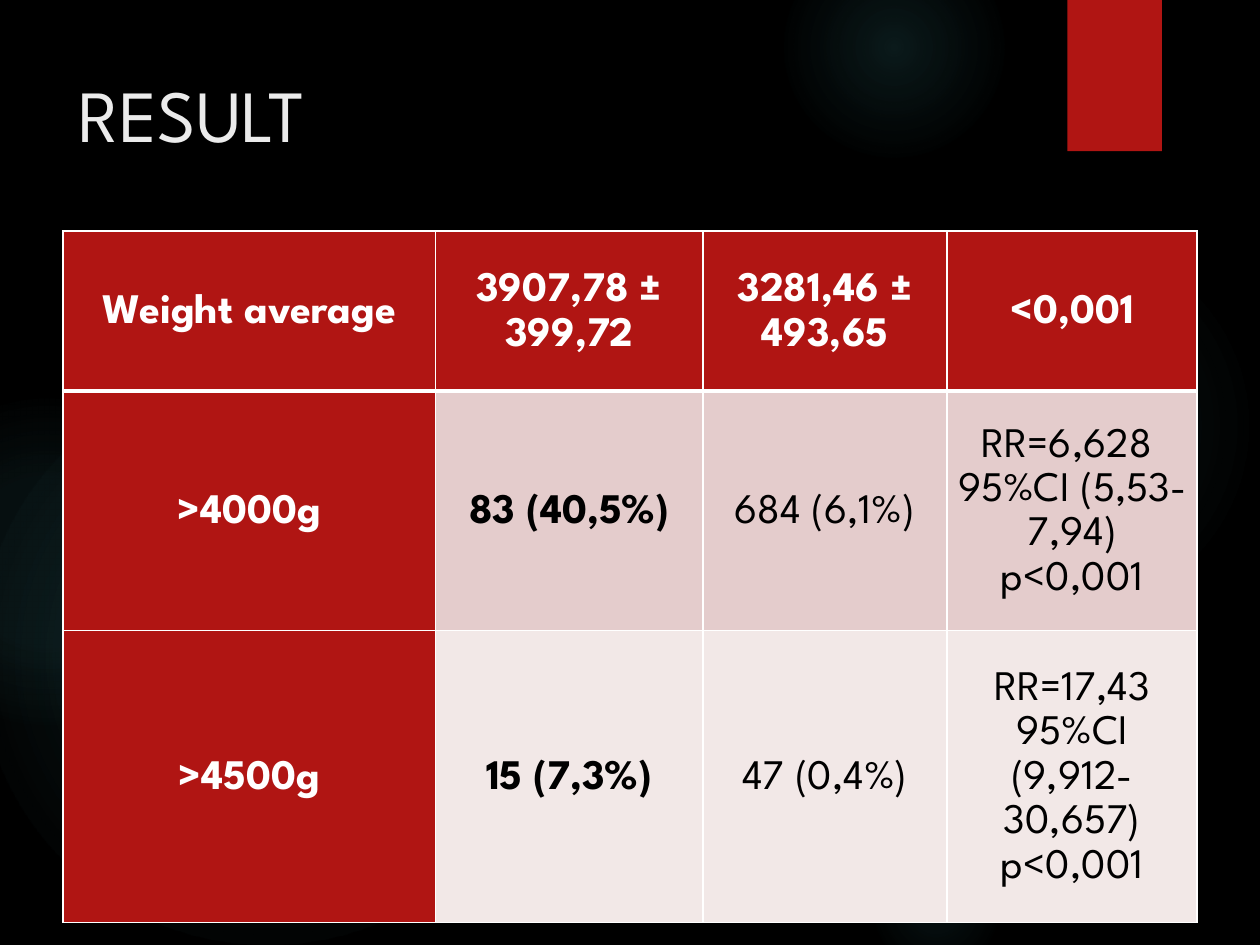
from dataclasses import dataclass

import pptx
import pptx.dml.color
import pptx.enum.shapes
import pptx.enum.text
import pptx.oxml
import pptx.oxml.ns
import pptx.util

Pt = pptx.util.Pt
Color = pptx.dml.color.RGBColor.from_string
ShapeKind = pptx.enum.shapes.MSO_SHAPE
Anchor = pptx.enum.text.MSO_ANCHOR
Align = pptx.enum.text.PP_ALIGN
NAMESPACE = pptx.oxml.ns.nsdecls("a")


@dataclass(frozen=True)
class Theme:
    font: str = "League Spartan"
    title_size: float = 42
    table_size: float = 24
    background: str = "000000"
    title: str = "EBEBEB"
    accent: str = "B01513"
    light: str = "FFFFFF"
    dark: str = "000000"
    bands: tuple[str, ...] = ("E4CCCC", "F2E8E7")
    glow: str = "50B9C1"


@dataclass(frozen=True)
class Glow:
    """A round light; stops are (position, opacity) in percent."""
    left: float
    top: float
    size: float
    stops: tuple[tuple[int, int], ...]


THEME = Theme()
GLOWS = (
    Glow(496, 132, 222, ((0, 7), (36, 6), (69, 0))),
    Glow(448, -36, 126, ((0, 14), (36, 7), (73, 0))),
    Glow(496, 480, 78, ((0, 9), (36, 5), (66, 0))),
    Glow(-12, 210, 330, ((0, 11), (36, 10), (75, 0))),
    Glow(-66, 228, 186, ((0, 8), (36, 8), (72, 0))),
)
COLUMN_WIDTHS = (213, 152.6, 139.7, 142.7)
ROW_HEIGHTS = (91.4, 136.8, 136.8)
ROWS = (
    ("Weight average", "3907,78 ± 399,72", "3281,46 ± 493,65", "<0,001"),
    (">4000g", "83 (40,5%)", "684 (6,1%)",
     "RR=6,628 \n95%CI (5,53-7,94) p<0,001"),
    (">4500g", "15 (7,3%)", "47 (0,4%)",
     "RR=17,43\n95%CI (9,912-30,657) p<0,001"),
)


def add_plain_shape(page, kind, left: float, top: float, width: float, height: float):
    shape = page.shapes.add_shape(kind, Pt(left), Pt(top), Pt(width), Pt(height))
    shape.shadow.inherit = False
    shape.line.fill.background()
    return shape


def add_glow(page, glow: Glow) -> None:
    shape = add_plain_shape(page, ShapeKind.OVAL, glow.left, glow.top, glow.size, glow.size)
    shape.fill.background()
    stops = "".join(
        f'<a:gs pos="{position * 1000}"><a:srgbClr val="{THEME.glow}">'
        f'<a:alpha val="{opacity * 1000}"/></a:srgbClr></a:gs>'
        for position, opacity in glow.stops
    )
    gradient = pptx.oxml.parse_xml(
        f'<a:gradFill {NAMESPACE} rotWithShape="1"><a:gsLst>{stops}</a:gsLst>'
        '<a:path path="circle"><a:fillToRect l="50000" t="50000" r="50000" b="50000"/>'
        "</a:path></a:gradFill>"
    )
    properties = shape._element.spPr
    properties.replace(properties.find(pptx.oxml.ns.qn("a:noFill")), gradient)


def add_ribbon(page) -> None:
    ribbon = add_plain_shape(page, ShapeKind.RECTANGLE, 610, 0, 54, 86.4)
    ribbon.fill.solid()
    ribbon.fill.fore_color.rgb = Color(THEME.accent)


def style_font(font, size: float, color: str, bold: bool = False) -> None:
    font.name = THEME.font
    font.size = Pt(size)
    font.bold = bold
    font.color.rgb = Color(color)


def add_title(page, text: str) -> None:
    box = page.shapes.add_textbox(Pt(38), Pt(36), Pt(556), Pt(110))
    box.text_frame.word_wrap = True
    para = box.text_frame.paragraphs[0]
    para.text = text
    style_font(para.font, THEME.title_size, THEME.title)


def set_borders(cell, bottom: float = 1, top: float = 1) -> None:
    """Draw the four cell edges; call before the cell is filled."""
    properties = cell._tc.get_or_add_tcPr()
    for side, width in (("L", 1), ("R", 1), ("T", top), ("B", bottom)):
        properties.append(pptx.oxml.parse_xml(
            f'<a:ln{side} {NAMESPACE} w="{Pt(width)}"><a:solidFill>'
            f'<a:srgbClr val="{THEME.light}"/></a:solidFill></a:ln{side}>'
        ))


def fill_cell(cell, text: str, row: int, column: int) -> None:
    heading = row == 0 or column == 0
    set_borders(cell, bottom=3 if row == 0 else 1, top=3 if row == 1 else 1)
    cell.fill.solid()
    cell.fill.fore_color.rgb = Color(THEME.accent if heading else THEME.bands[row - 1])
    cell.vertical_anchor = Anchor.MIDDLE
    cell.margin_left = cell.margin_right = Pt(5)
    cell.margin_top = cell.margin_bottom = Pt(0.7)
    cell.text = text
    for para in cell.text_frame.paragraphs:
        para.alignment = Align.CENTER
        para.line_spacing = 1.15
        style_font(para.font, THEME.table_size,
                   THEME.light if heading else THEME.dark, heading or column == 1)


def add_result_table(page) -> None:
    table = page.shapes.add_table(
        len(ROWS), len(COLUMN_WIDTHS), Pt(36), Pt(132),
        Pt(sum(COLUMN_WIDTHS)), Pt(sum(ROW_HEIGHTS)),
    ).table
    table.first_col = True
    for column, width in zip(table.columns, COLUMN_WIDTHS):
        column.width = Pt(width)
    for row, height in zip(table.rows, ROW_HEIGHTS):
        row.height = Pt(height)
    for row_index, texts in enumerate(ROWS):
        for column_index, text in enumerate(texts):
            fill_cell(table.cell(row_index, column_index), text, row_index, column_index)


def main() -> None:
    deck = pptx.Presentation()
    deck.slide_width, deck.slide_height = Pt(720), Pt(540)
    page = deck.slides.add_slide(deck.slide_layouts[6])
    page.background.fill.solid()
    page.background.fill.fore_color.rgb = Color(THEME.background)
    for glow in GLOWS:
        add_glow(page, glow)
    add_ribbon(page)
    add_title(page, "RESULT")
    add_result_table(page)
    deck.save("out.pptx")


if __name__ == "__main__":
    main()
